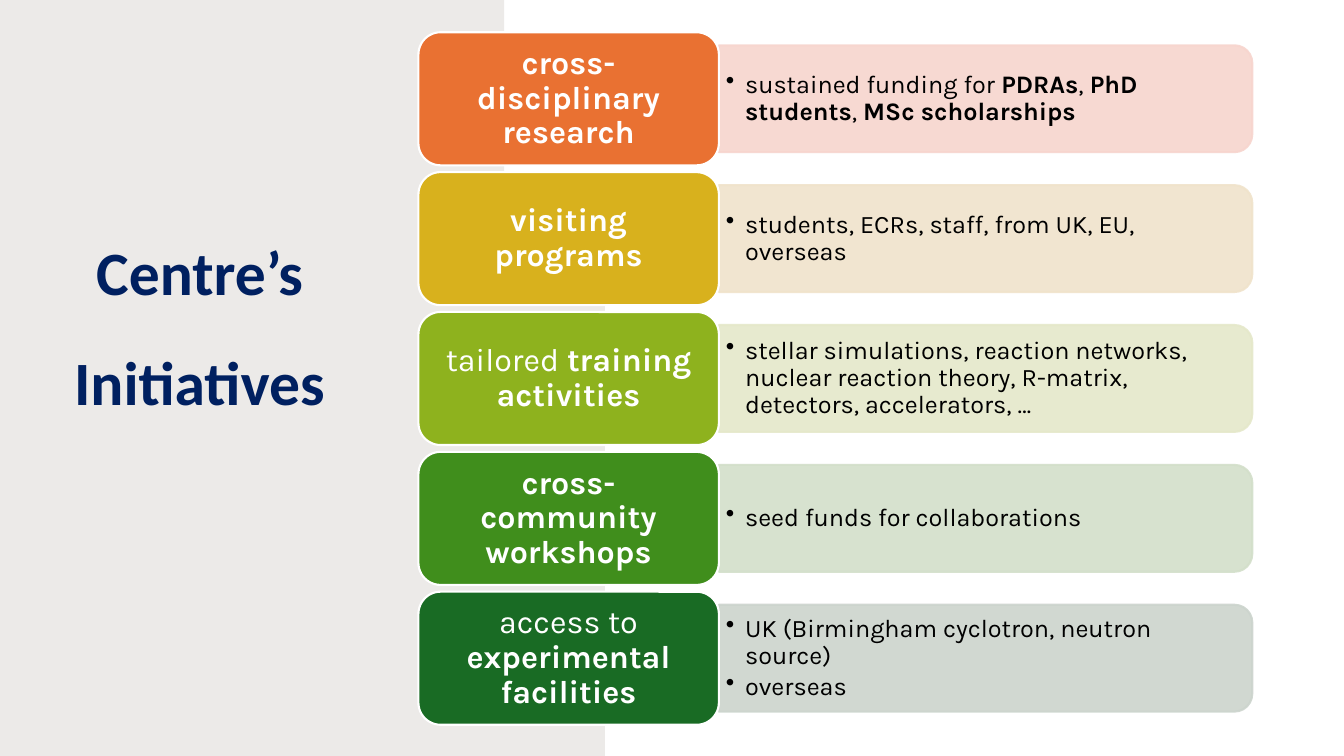
from lxml.etree import SubElement
from pptx import Presentation
from pptx.dml.color import RGBColor
from pptx.enum.shapes import MSO_SHAPE as Shape
from pptx.enum.text import MSO_ANCHOR as Anchor, MSO_AUTO_SIZE as AutoSize, PP_ALIGN as Align
from pptx.oxml.ns import qn
from pptx.util import Inches, Pt

COLOURS = {"panel": "82766A", "title": "002060", "text": "000000", "white": "FFFFFF"}

INITIATIVES = [
    ("E97132", "F7D5CE", "*cross-disciplinary research*",
     ["sustained funding for *PDRAs*, *PhD students*, *MSc scholarships*"]),
    ("D8B11D", "F0E3CB", "*visiting programs*",
     ["students, ECRs, staff, from UK, EU, overseas"]),
    ("8EB21E", "E5E8CA", "tailored *training activities*",
     ["stellar simulations, reaction networks, nuclear reaction theory, "
      "R-matrix, detectors, accelerators, …"]),
    ("408E1C", "D3DFCA", "*cross-community workshops*",
     ["seed funds for collaborations"]),
    ("196B24", "CCD4CD", "access to *experimental facilities*",
     ["UK (Birmingham cyclotron, neutron source)", "overseas"]),
]

PANEL_EDGE = [
    (5.49, 0), (5.49, 0.05), (5.47, 0.22), (5.46, 0.45), (5.44, 0.64), (5.4, 0.88),
    (5.4, 0.96), (5.38, 1.03), (5.41, 1.17), (5.39, 1.35), (5.39, 1.59), (5.44, 1.71),
    (5.49, 1.86), (5.51, 2), (5.55, 2.08), (5.55, 2.17), (5.58, 2.32), (5.64, 2.47),
    (5.68, 2.55), (5.7, 2.74), (5.72, 2.9), (5.71, 3.02), (5.74, 3.1), (5.78, 3.14),
    (5.79, 3.24), (5.83, 3.34), (5.87, 3.5), (5.94, 3.73), (5.96, 3.85), (5.97, 4.2),
    (5.95, 4.39), (5.97, 4.48), (5.97, 4.84), (6, 4.94), (5.98, 5.1), (5.96, 5.21),
    (6.01, 5.34), (6.03, 5.43), (6.03, 5.61), (6.05, 5.72), (6.07, 5.86), (6.09, 6.06),
    (6.12, 6.17), (6.16, 6.34), (6.14, 6.39), (6.17, 6.62), (6.17, 6.75), (6.23, 6.96),
    (6.26, 7.17), (6.33, 7.45), (6.35, 7.5),
]

LABEL_LEFT, LABEL_WIDTH, LABEL_HEIGHT = 4.15, 2.98, 1.32
BAR_LEFT, BAR_WIDTH, BAR_HEIGHT = LABEL_LEFT + LABEL_WIDTH, 5.29, 1.06
FIRST_TOP, LAST_TOP = 0.32, 5.87


class Painter:
    """Draws the elements of the page in one style."""

    def __init__(self, page):
        """Keep the page and the body font."""
        self.page = page
        self.shapes = page.shapes
        self.font = "Karla"

    def paint(self, shape, fill, line=None, opacity=100):
        """Give a shape a flat fill and an optional outline."""
        shape.shadow.inherit = False
        shape.fill.solid()
        shape.fill.fore_color.rgb = RGBColor.from_string(fill)
        if line:
            shape.line.color.rgb = RGBColor.from_string(line)
            shape.line.width = Pt(1.5)
        else:
            shape.line.fill.background()
        if opacity < 100:
            for colour in shape._element.spPr.iter(qn("a:srgbClr")):
                SubElement(colour, qn("a:alpha"), val=str(opacity * 1000))

    def style(self, para, name, size, colour, spacing):
        """Set the font and line spacing of a paragraph."""
        para.font.name = name
        para.font.size = Pt(size)
        para.font.color.rgb = RGBColor.from_string(colour)
        para.line_spacing = spacing

    def add_words(self, para, marked, size, colour):
        """Fill a paragraph, with the words between asterisks in bold."""
        self.style(para, self.font, size, colour, 0.9)
        for index, words in enumerate(marked.split("*")):
            if words:
                span = para.add_run()
                span.text = words
                span.font.bold = index % 2 == 1

    def frame(self, shape, side, edge):
        """Prepare a wrapped, vertically centred text frame."""
        frame = shape.text_frame
        frame.word_wrap = True
        frame.vertical_anchor = Anchor.MIDDLE
        frame.margin_left = frame.margin_right = Inches(side)
        frame.margin_top = frame.margin_bottom = Inches(edge)
        return frame

    def panel(self, edge):
        """Draw the shaded panel behind everything else."""
        builder = self.shapes.build_freeform(0, 0, scale=Inches(1))
        builder.add_line_segments(edge + [(0, 7.5)], close=True)
        panel = builder.convert_to_shape()
        self.paint(panel, COLOURS["panel"], opacity=15)
        self.shapes._spTree.insert(2, panel._element)

    def title(self, words):
        """Place and fill the title."""
        title = self.shapes.title
        title.left, title.top = Inches(0), Inches(1.14)
        title.width, title.height = Inches(3.96), Inches(3.06)
        frame = title.text_frame
        frame.text = words
        frame.word_wrap = True
        frame.auto_size = AutoSize.NONE
        frame.vertical_anchor = Anchor.BOTTOM
        para = frame.paragraphs[0]
        para.alignment = Align.CENTER
        self.style(para, "Calibri", 44, COLOURS["title"], 1.5)
        para.font.bold = True

    def bar(self, middle, fill):
        """Draw a pale bar rounded on its right side."""
        bar = self.shapes.add_shape(
            Shape.ROUND_2_SAME_RECTANGLE,
            Inches(BAR_LEFT + (BAR_WIDTH - BAR_HEIGHT) / 2), Inches(middle - BAR_WIDTH / 2),
            Inches(BAR_HEIGHT), Inches(BAR_WIDTH))
        bar.rotation = 90
        self.paint(bar, fill, fill, 90)

    def bullets(self, middle, items):
        """Put a bulleted list over a bar."""
        box = self.shapes.add_textbox(
            Inches(BAR_LEFT), Inches(middle - 0.475), Inches(5.24), Inches(0.95))
        frame = self.frame(box, 0.07, 0.04)
        for index, item in enumerate(items):
            para = frame.add_paragraph() if index else frame.paragraphs[0]
            self.add_words(para, item, 18, COLOURS["text"])
            para.space_after = Pt(2.7)
            props = para._p.get_or_add_pPr()
            props.set("marL", str(Inches(0.19)))
            props.set("indent", str(Inches(-0.19)))
            bullet = props.makeelement(qn("a:buChar"), {"char": "•"})
            props.find(qn("a:defRPr")).addprevious(bullet)

    def label(self, top, words, fill):
        """Draw a rounded box with a centred label."""
        box = self.shapes.add_shape(
            Shape.ROUNDED_RECTANGLE, Inches(LABEL_LEFT), Inches(top),
            Inches(LABEL_WIDTH), Inches(LABEL_HEIGHT))
        self.paint(box, fill, COLOURS["white"])
        para = self.frame(box, 0.16, 0.11).paragraphs[0]
        para.alignment = Align.CENTER
        self.add_words(para, words, 23, COLOURS["white"])


def main():
    """Build the deck and save it."""
    deck = Presentation()
    deck.slide_width, deck.slide_height = Inches(13.33), Inches(7.5)
    painter = Painter(deck.slides.add_slide(deck.slide_layouts[5]))
    painter.panel(PANEL_EDGE)
    painter.title("Centre’s Initiatives")
    pitch = (LAST_TOP - FIRST_TOP) / (len(INITIATIVES) - 1)
    for row, (strong, pale, words, items) in enumerate(INITIATIVES):
        top = FIRST_TOP + row * pitch
        middle = top + LABEL_HEIGHT / 2
        painter.bar(middle, pale)
        painter.bullets(middle, items)
        painter.label(top, words, strong)
    deck.save("out.pptx")


if __name__ == "__main__":
    main()
